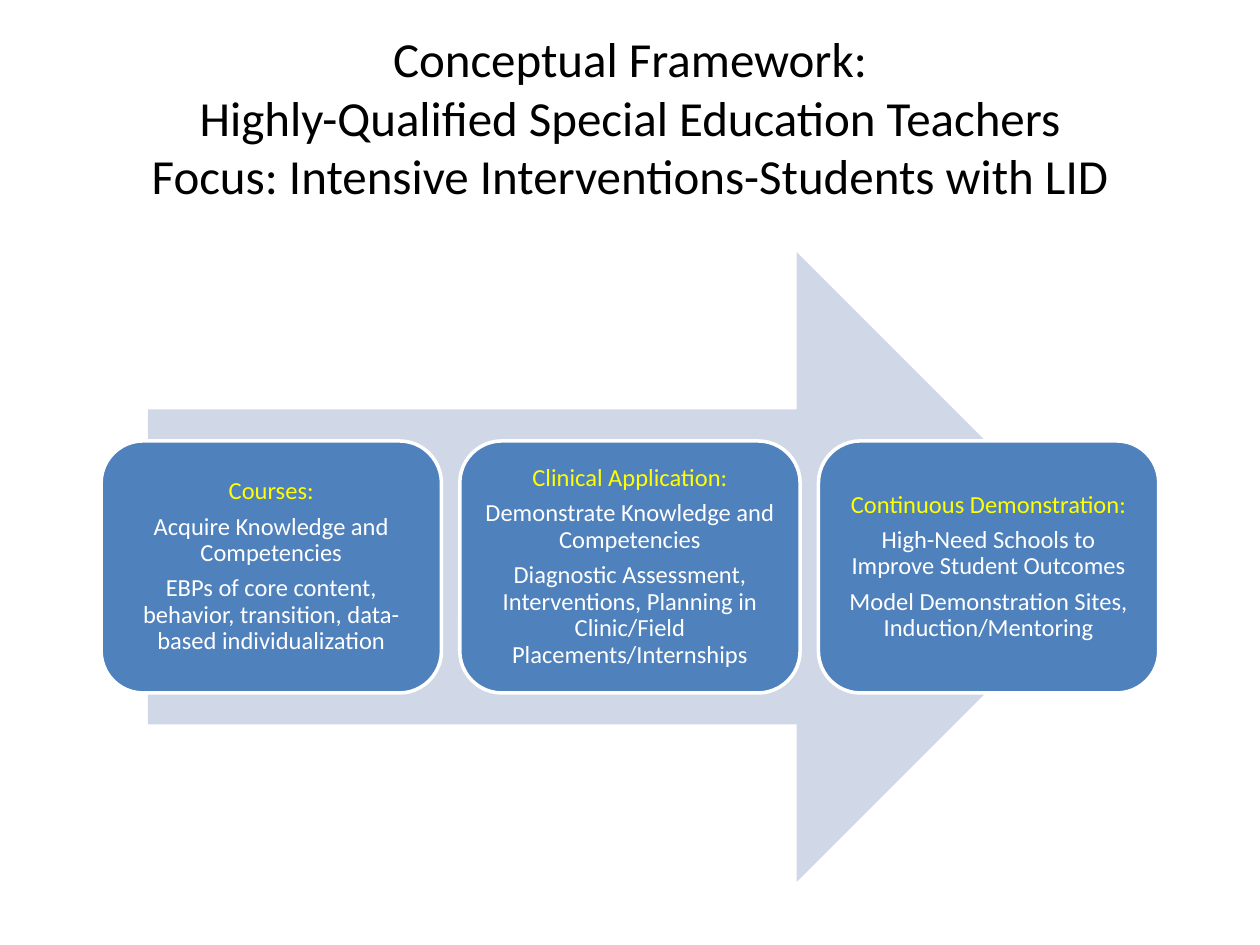
from pptx import Presentation
from pptx.dml.color import RGBColor
from pptx.enum.shapes import MSO_SHAPE
from pptx.enum.text import MSO_ANCHOR, PP_ALIGN
from pptx.util import Cm, Pt

BLACK = RGBColor(0x00, 0x00, 0x00)
WHITE = RGBColor(0xFF, 0xFF, 0xFF)
YELLOW = RGBColor(0xFF, 0xFF, 0x00)
BLUE = RGBColor(0x4F, 0x81, 0xBD)
PALE = RGBColor(0xD0, 0xD8, 0xE8)

TITLE = "\v".join([
    "Conceptual Framework:",
    "Highly-Qualified Special Education Teachers",
    "Focus: Intensive Interventions-Students with LID",
])
STAGES = [
    ("Courses:",
     "Acquire Knowledge and Competencies",
     "EBPs of core content, behavior, transition, data-based individualization"),
    ("Clinical Application:",
     "Demonstrate Knowledge and Competencies",
     "Diagnostic Assessment, Interventions, Planning in Clinic/Field "
     "Placements/Internships"),
    ("Continuous Demonstration:",
     "High-Need Schools to Improve Student Outcomes",
     "Model Demonstration Sites, Induction/Mentoring"),
]
LEFT, TOP, WIDTH, HEIGHT, STEP = 2.04, 8.89, 6.86, 5.08, 7.23


def put_text(shape, lines, size, colors, inset=None, spacing=None, after=None):
    """Fill a shape with centred paragraphs, one colour for each."""
    frame = shape.text_frame
    frame.word_wrap = True
    frame.vertical_anchor = MSO_ANCHOR.MIDDLE
    if inset is not None:
        frame.margin_left = frame.margin_right = Cm(inset)
        frame.margin_top = frame.margin_bottom = Cm(inset)
    for i, (line, color) in enumerate(zip(lines, colors)):
        para = frame.paragraphs[0] if i == 0 else frame.add_paragraph()
        para.text = line
        para.alignment = PP_ALIGN.CENTER
        para.line_spacing = spacing
        para.space_after = after
        for run in para.runs:
            run.font.name = "Calibri"
            run.font.size = Pt(size)
            run.font.color.rgb = color


def add_block(slide, kind, box, fill):
    block = slide.shapes.add_shape(kind, *map(Cm, box))
    block.shadow.inherit = False
    block.fill.solid()
    block.fill.fore_color.rgb = fill
    block.line.fill.background()
    return block


def main():
    deck = Presentation()
    deck.slide_width, deck.slide_height = Cm(25.4), Cm(19.05)
    slide = deck.slides.add_slide(deck.slide_layouts[6])

    title = slide.shapes.add_textbox(Cm(1.27), Cm(0.76), Cm(22.86), Cm(3.18))
    put_text(title, [TITLE], 28, [BLACK])

    add_block(slide, MSO_SHAPE.RIGHT_ARROW, (2.98, 5.08, 19.43, 12.7), PALE)
    for i, lines in enumerate(STAGES):
        box = (LEFT + i * STEP, TOP, WIDTH, HEIGHT)
        card = add_block(slide, MSO_SHAPE.ROUNDED_RECTANGLE, box, BLUE)
        card.line.color.rgb = WHITE
        card.line.width = Pt(2)
        put_text(card, lines, 14, (YELLOW, WHITE, WHITE),
                 inset=0.15, spacing=0.9, after=Pt(5))

    deck.save("out.pptx")


if __name__ == "__main__":
    main()
